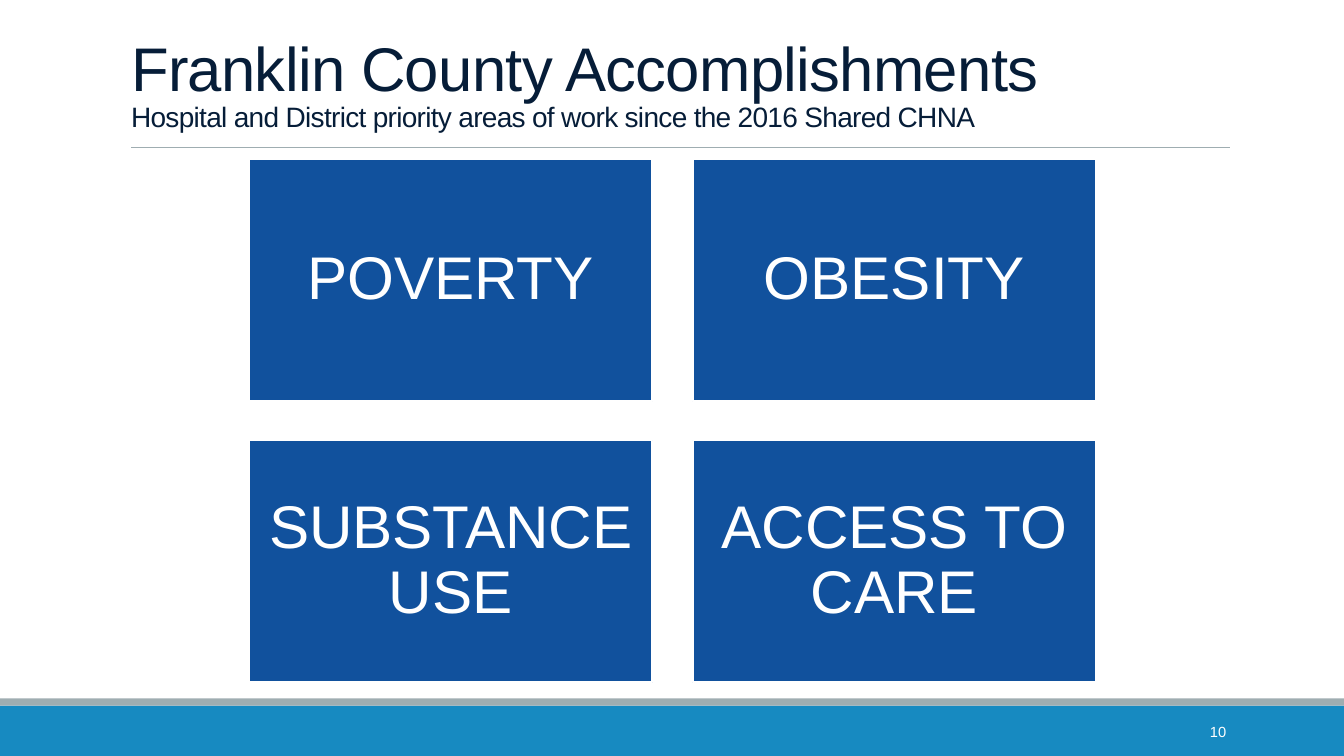
from dataclasses import dataclass

from pptx import Presentation
from pptx.dml.color import RGBColor
from pptx.enum.shapes import MSO_CONNECTOR, MSO_SHAPE
from pptx.enum.text import MSO_ANCHOR, MSO_AUTO_SIZE, PP_ALIGN
from pptx.oxml.ns import qn
from pptx.shapes.autoshape import Shape
from pptx.slide import Slide
from pptx.util import Inches, Pt


@dataclass(frozen=True)
class Theme:
    font: str = "Arial"
    navy: str = "061D38"
    tile_blue: str = "11519D"
    footer_blue: str = "178AC1"
    grey: str = "9FADB1"
    white: str = "FFFFFF"
    title_size: float = 44
    subtitle_size: float = 20
    tile_size: float = 43
    number_size: float = 10.5


@dataclass(frozen=True)
class Box:
    left: float
    top: float
    width: float
    height: float

    def lengths(self) -> tuple:
        return tuple(Inches(v) for v in (self.left, self.top, self.width, self.height))


THEME = Theme()
SLIDE_WIDTH, SLIDE_HEIGHT = 13.33, 7.5
FOOTER_BANDS = (
    (Box(0, 7, SLIDE_WIDTH, 0.5), THEME.footer_blue),
    (Box(0, 6.93, SLIDE_WIDTH, 0.07), THEME.grey),
)
PRIORITIES = ("POVERTY", "OBESITY", "SUBSTANCE USE", "ACCESS TO CARE")
COLUMNS = 2
FIRST_TILE = Box(2.47, 1.58, 4, 2.4)
COLUMN_STEP, ROW_STEP = 4.4, 2.79
TILE_INSET = 0.18


def add_run(paragraph, text: str, size: float, color: str):
    run = paragraph.add_run()
    run.text = text
    run.font.name = THEME.font
    run.font.size = Pt(size)
    run.font.color.rgb = RGBColor.from_string(color)
    return run


def add_rectangle(slide: Slide, box: Box, fill: str) -> Shape:
    rectangle = slide.shapes.add_shape(MSO_SHAPE.RECTANGLE, *box.lengths())
    rectangle.shadow.inherit = False
    rectangle.fill.solid()
    rectangle.fill.fore_color.rgb = RGBColor.from_string(fill)
    rectangle.line.fill.background()
    return rectangle


def add_title(slide: Slide) -> None:
    title = slide.shapes.title
    title.left, title.top, title.width, title.height = Box(1.2, 0.31, 11, 1.06).lengths()
    frame = title.text_frame
    frame.auto_size = MSO_AUTO_SIZE.NONE
    frame.vertical_anchor = MSO_ANCHOR.BOTTOM
    heading = frame.paragraphs[0]
    heading.alignment = PP_ALIGN.LEFT
    heading.line_spacing = 0.85
    main = add_run(heading, "Franklin County Accomplishments", THEME.title_size, THEME.navy)
    heading.add_line_break()
    subtitle = add_run(
        heading,
        "Hospital and District priority areas of work since the 2016 Shared CHNA",
        THEME.subtitle_size,
        THEME.navy,
    )
    for run in (main, subtitle):
        run.font._element.set("spc", "-50")


def add_title_rule(slide: Slide) -> None:
    rule = slide.shapes.add_connector(
        MSO_CONNECTOR.STRAIGHT, Inches(1.3), Inches(1.46), Inches(12.2), Inches(1.46)
    )
    rule.line.color.rgb = RGBColor.from_string(THEME.grey)
    rule.line.width = Pt(0.5)
    properties = rule._element.spPr
    properties.append(properties.makeelement(qn("a:effectLst"), {}))


def add_priority_tile(slide: Slide, index: int, label: str) -> None:
    row, column = divmod(index, COLUMNS)
    box = Box(
        FIRST_TILE.left + column * COLUMN_STEP,
        FIRST_TILE.top + row * ROW_STEP,
        FIRST_TILE.width,
        FIRST_TILE.height,
    )
    tile = add_rectangle(slide, box, THEME.tile_blue)
    tile.line.color.rgb = RGBColor.from_string(THEME.white)
    tile.line.width = Pt(1.25)
    frame = tile.text_frame
    frame.word_wrap = True
    frame.vertical_anchor = MSO_ANCHOR.MIDDLE
    frame.margin_left = frame.margin_right = Inches(TILE_INSET)
    frame.margin_top = frame.margin_bottom = Inches(TILE_INSET)
    paragraph = frame.paragraphs[0]
    paragraph.alignment = PP_ALIGN.CENTER
    paragraph.line_spacing = 0.9
    add_run(paragraph, label, THEME.tile_size, THEME.white)


def add_slide_number(slide: Slide) -> None:
    number = slide.shapes.add_textbox(*Box(10.83, 7.06, 1.43, 0.4).lengths())
    frame = number.text_frame
    frame.word_wrap = True
    frame.vertical_anchor = MSO_ANCHOR.MIDDLE
    paragraph = frame.paragraphs[0]
    paragraph.alignment = PP_ALIGN.RIGHT
    add_run(paragraph, "10", THEME.number_size, THEME.white)


def main() -> None:
    deck = Presentation()
    deck.slide_width, deck.slide_height = Inches(SLIDE_WIDTH), Inches(SLIDE_HEIGHT)
    title_only = deck.slide_layouts.get_by_name("Title Only")
    slide = deck.slides.add_slide(title_only)
    for box, fill in FOOTER_BANDS:
        add_rectangle(slide, box, fill)
    add_title_rule(slide)
    add_title(slide)
    for index, label in enumerate(PRIORITIES):
        add_priority_tile(slide, index, label)
    add_slide_number(slide)
    deck.save("out.pptx")


if __name__ == "__main__":
    main()
